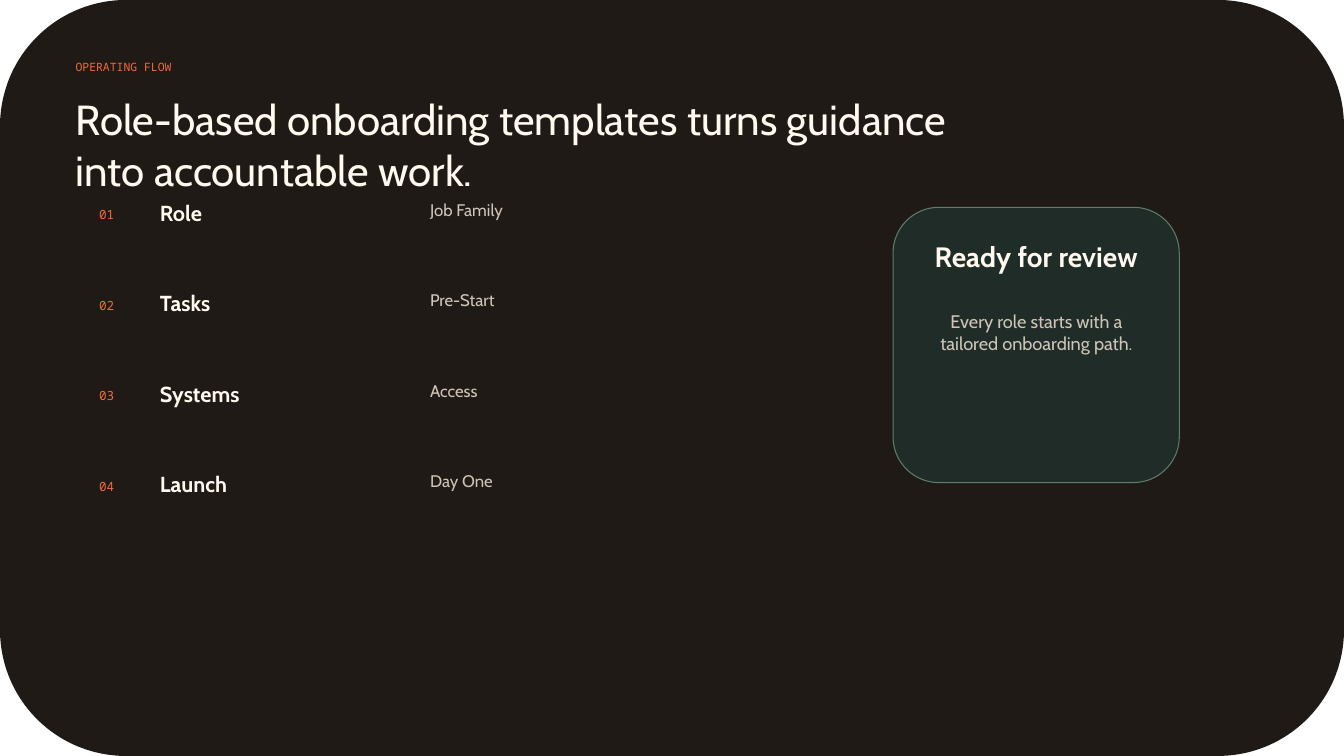
from pptx import Presentation
from pptx import util as u
from pptx.dml.color import RGBColor
from pptx.enum import shapes, text

INK = RGBColor(0x20, 0x1A, 0x16)
CREAM = RGBColor(0xFF, 0xF9, 0xEF)
SAND = RGBColor(0xCF, 0xC4, 0xB8)
ORANGE = RGBColor(0xF2, 0x6B, 0x3A)
PINE = RGBColor(0x1F, 0x2C, 0x27)
SAGE = RGBColor(0x5C, 0x7E, 0x6B)

WIDTH, HEIGHT = 960, 540
STEPS_TOP, STEP_PITCH = 142.6, 64.6
STEPS = [
    ("Role", "Job Family"),
    ("Tasks", "Pre-Start"),
    ("Systems", "Access"),
    ("Launch", "Day One"),
]


def write(frame, content, *, size, color, font, bold=False, align=text.PP_ALIGN.LEFT):
    paragraph = frame.paragraphs[0]
    paragraph.alignment = align
    run = paragraph.add_run()
    run.text = content
    run.font.name = font
    run.font.size = u.Pt(size)
    run.font.bold = bold
    run.font.color.rgb = color


class SlideBuilder:
    sans = "Cabin"
    mono = "Noto Sans Mono"

    def __init__(self, slide):
        self.slide = slide

    def panel(self, left, top, width, height, fill, line=None):
        shape = self.slide.shapes.add_shape(
            shapes.MSO_SHAPE.ROUNDED_RECTANGLE,
            u.Pt(left), u.Pt(top), u.Pt(width), u.Pt(height))
        shape.shadow.inherit = False
        shape.fill.solid()
        shape.fill.fore_color.rgb = fill
        if line is None:
            shape.line.fill.background()
        else:
            shape.line.color.rgb = line
            shape.line.width = u.Pt(0.75)

    def label(self, content, left, top, width, height, *, font=None, **style):
        box = self.slide.shapes.add_textbox(
            u.Pt(left), u.Pt(top), u.Pt(width), u.Pt(height))
        frame = box.text_frame
        frame.word_wrap = True
        frame.vertical_anchor = text.MSO_ANCHOR.TOP
        frame.margin_left = frame.margin_right = 0
        frame.margin_top = frame.margin_bottom = 0
        write(frame, content, font=font or self.sans, **style)

    def step(self, number, name, detail, top):
        self.label(f"{number:02d}", 70.8, top + 5.5, 39.6, 17.3,
                   font=self.mono, size=9, color=ORANGE)
        self.label(name, 114.2, top, 204.5, 20.2, size=15.5, color=CREAM, bold=True)
        self.label(detail, 307.2, top, 283.7, 22.3, size=12, color=SAND)


def main():
    presentation = Presentation()
    presentation.slide_width = u.Pt(WIDTH)
    presentation.slide_height = u.Pt(HEIGHT)
    slide = presentation.slides.add_slide(presentation.slide_layouts[6])
    builder = SlideBuilder(slide)

    builder.panel(0, 0, WIDTH, HEIGHT, INK)
    builder.label("OPERATING FLOW", 54, 43.2, 330.5, 20.2,
                  font=builder.mono, size=8.2, color=ORANGE)
    builder.label("Role-based onboarding templates turns guidance into accountable work.",
                  54, 67, 677.5, 51, size=30, color=CREAM)

    for index, (name, detail) in enumerate(STEPS):
        builder.step(index + 1, name, detail, STEPS_TOP + index * STEP_PITCH)

    builder.panel(637.9, 148.1, 204.5, 196.6, PINE, SAGE)
    builder.label("Ready for review", 657.4, 171.4, 165.6, 33.1,
                  size=20, color=CREAM, bold=True, align=text.PP_ALIGN.CENTER)
    builder.label("Every role starts with a tailored onboarding path.",
                  657.4, 221.8, 165.6, 70.6,
                  size=13, color=SAND, align=text.PP_ALIGN.CENTER)

    presentation.save("out.pptx")


if __name__ == "__main__":
    main()
